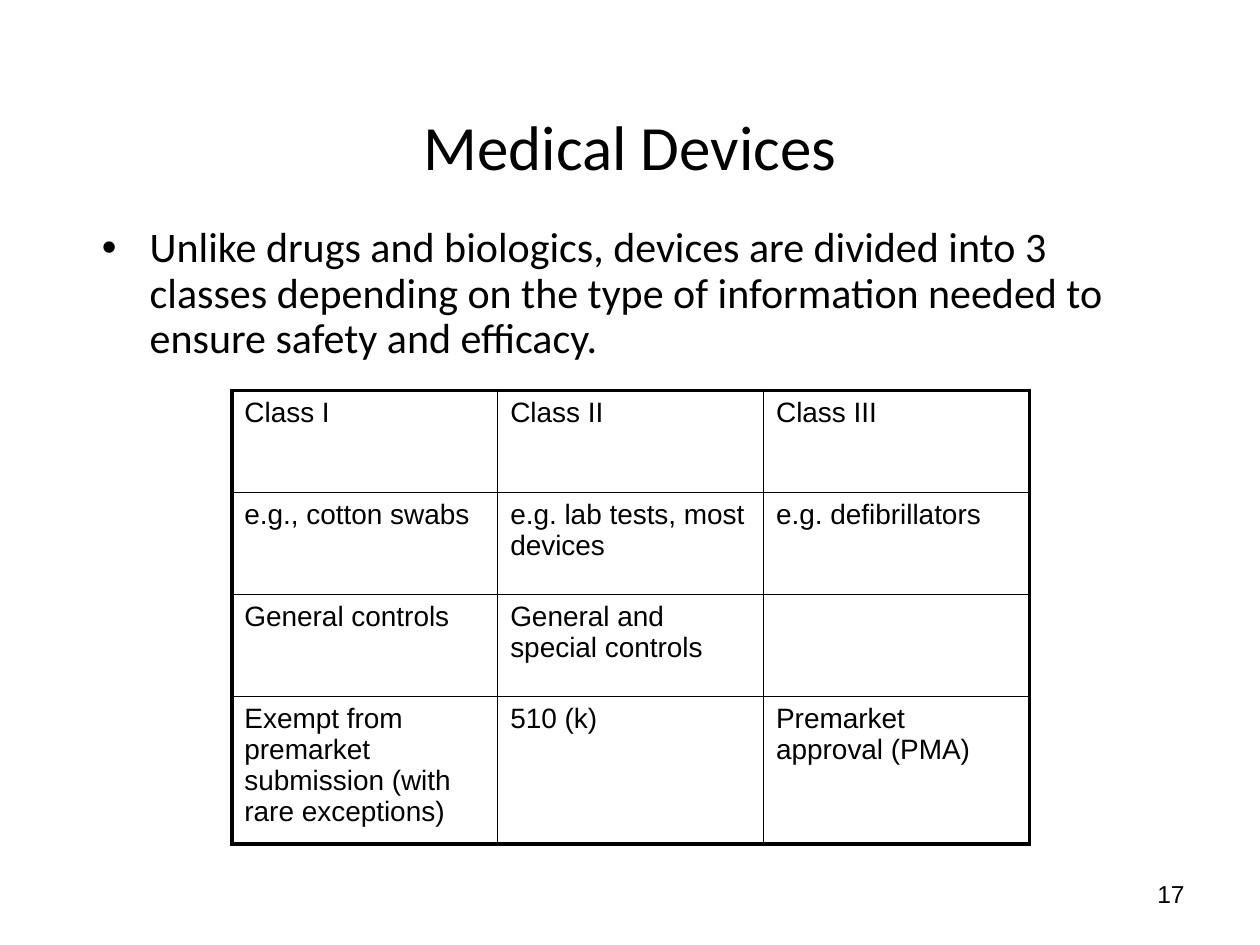
import lxml.etree
import pptx
import pptx.dml.color
import pptx.enum.text
import pptx.oxml.ns
import pptx.util
from pptx.util import Inches

BLACK = pptx.dml.color.RGBColor(0, 0, 0)
WHITE = pptx.dml.color.RGBColor(255, 255, 255)
ALIGN = pptx.enum.text.PP_ALIGN
ANCHOR = pptx.enum.text.MSO_ANCHOR

BULLET_INDENT = Inches(0.38)
COLUMN_WIDTH = 2.11
ROW_HEIGHTS = [0.81, 0.81, 0.81, 1.17]
OUTER_LINE = 2.25
INNER_LINE = 1

DEVICE_CLASSES = [
    ["Class I", "Class II", "Class III"],
    ["e.g., cotton swabs", "e.g. lab tests, most devices", "e.g. defibrillators"],
    ["General controls", "General and special controls", ""],
    [
        "Exempt from premarket submission (with rare exceptions)",
        "510 (k)",
        "Premarket approval (PMA)",
    ],
]


def add_element(parent, tag, **attributes):
    return lxml.etree.SubElement(parent, pptx.oxml.ns.qn(tag), attributes)


def write_text(frame, text, font="Arial", size=16, align=ALIGN.LEFT, spacing=None):
    para = frame.paragraphs[0]
    para.alignment = align
    para.line_spacing = spacing
    span = para.add_run()
    span.text = text
    span.font.name = font
    span.font.size = pptx.util.Pt(size)
    span.font.color.rgb = BLACK
    return para


def add_text_box(page, left, top, width, height, text, anchor=ANCHOR.MIDDLE, **style):
    box = page.shapes.add_textbox(
        Inches(left), Inches(top), Inches(width), Inches(height)
    )
    box.text_frame.word_wrap = True
    box.text_frame.vertical_anchor = anchor
    return write_text(box.text_frame, text, **style)


def add_bullet(para):
    properties = para._p.get_or_add_pPr()
    properties.set("marL", str(BULLET_INDENT))
    properties.set("indent", str(-BULLET_INDENT))
    add_element(properties, "a:buFont", typeface="Arial")
    add_element(properties, "a:buChar", char="•")


def set_borders(cell, outer_sides):
    properties = cell._tc.get_or_add_tcPr()
    for side in "LRTB":
        width = OUTER_LINE if side in outer_sides else INNER_LINE
        line = add_element(properties, f"a:ln{side}", w=str(pptx.util.Pt(width)))
        fill = add_element(line, "a:solidFill")
        add_element(fill, "a:srgbClr", val=str(BLACK))


def add_class_table(page, left, top, rows):
    row_count, column_count = len(rows), len(rows[0])
    table = page.shapes.add_table(
        row_count,
        column_count,
        Inches(left),
        Inches(top),
        Inches(COLUMN_WIDTH * column_count),
        Inches(sum(ROW_HEIGHTS)),
    ).table
    table.first_row = False
    table.horz_banding = False
    for column in table.columns:
        column.width = Inches(COLUMN_WIDTH)
    for row_index, texts in enumerate(rows):
        table.rows[row_index].height = Inches(ROW_HEIGHTS[row_index])
        for column_index, text in enumerate(texts):
            cell = table.cell(row_index, column_index)
            edges = {
                "L": column_index == 0,
                "R": column_index == column_count - 1,
                "T": row_index == 0,
                "B": row_index == row_count - 1,
            }
            set_borders(cell, [side for side, outer in edges.items() if outer])
            cell.fill.background()
            if text:
                write_text(cell.text_frame, text)


def main():
    deck = pptx.Presentation()
    deck.slide_width = Inches(10)
    deck.slide_height = Inches(7.5)
    page = deck.slides.add_slide(deck.slide_layouts[6])
    page.background.fill.solid()
    page.background.fill.fore_color.rgb = WHITE

    add_text_box(page, 7.17, 6.83, 2.33, 0.52, "17", size=14, align=ALIGN.RIGHT)
    add_text_box(
        page, -0.25, 0.49, 10.5, 1.33, "Medical Devices",
        font="Calibri", size=36, align=ALIGN.CENTER,
    )
    summary = add_text_box(
        page, 0.71, 1.75, 8.67, 2.67,
        "Unlike drugs and biologics, devices are divided into 3 classes depending "
        "on the type of information needed to ensure safety and efficacy.",
        anchor=ANCHOR.TOP, font="Calibri", size=24, spacing=0.9,
    )
    add_bullet(summary)
    add_class_table(page, 1.84, 3.1, DEVICE_CLASSES)

    deck.save("out.pptx")


if __name__ == "__main__":
    main()
